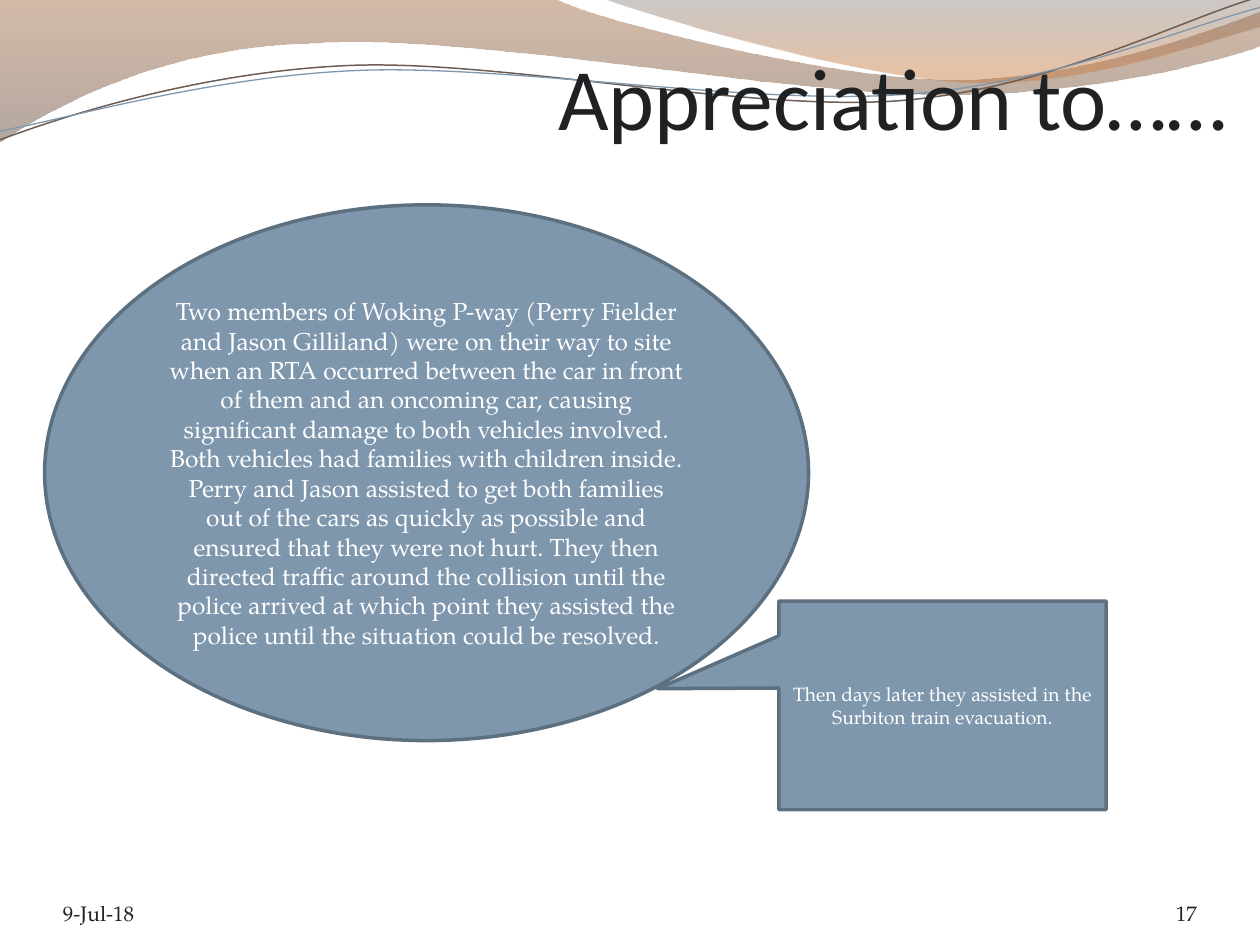
from math import cos, radians, sin

from lxml.etree import Element, SubElement
from pptx import Presentation
from pptx.dml.color import RGBColor
from pptx.enum.shapes import MSO_SHAPE
from pptx.enum.text import MSO_ANCHOR, MSO_AUTO_SIZE, PP_ALIGN
from pptx.oxml.ns import qn
from pptx.util import Cm, Pt

SERIF = "TeX Gyre Pagella"
INCH = 2.54
TILT = -2.7

BAND = [(0, 0), (4.4, -0.01),
        (4.76, 0.17, 6.64, 0.63, 7.58, 0.63), (8.53, 0.63, 9.58, 0.26, 10, 0.09),
        (10.01, 0.36),
        (9.83, 0.44, 8.7, 0.76, 7.46, 0.75), (6.22, 0.75, 3.82, 0.28, 2.57, 0.34),
        (1.29, 0.36, 0.46, 0.83, -0.01, 1.13), (0, 0)]
CREST = [(4.79, -0.01),
         (5.09, 0.11, 6.82, 0.62, 7.69, 0.65), (8.56, 0.69, 9.61, 0.32, 10, 0.21),
         (10, 0), (4.79, -0.01)]
BROWN = [(0, 1.11), (0.48, 0.93, 1.58, 0.57, 2.77, 0.52),
         (3.95, 0.47, 5.93, 0.89, 7.13, 0.8), (8.33, 0.71, 9.38, 0.15, 9.98, -0.02)]
BLUE = [(0, 1.04), (0.47, 0.96, 1.64, 0.61, 2.83, 0.56),
        (4.03, 0.51, 5.97, 0.84, 7.17, 0.75), (8.36, 0.67, 9.41, 0.21, 10, 0.06)]

STORY = (
    "Two members of Woking P-way (Perry Fielder and Jason Gilliland) were on "
    "their way to site when an RTA occurred between the car in front of them "
    "and an oncoming car, causing significant damage to both vehicles involved. "
    "Both vehicles had families with children inside. Perry and Jason assisted "
    "to get both families out of the cars as quickly as possible and ensured "
    "that they were not hurt. They then directed traffic around the collision "
    "until the police arrived at which point they assisted the police until "
    "the situation could be resolved."
)


def color(code):
    return RGBColor.from_string(code)


def pairs(part):
    return list(zip(part[::2], part[1::2]))


def turn(route, mid, angle):
    c, s = cos(radians(angle)), sin(radians(angle))
    return [tuple(value for x, y in pairs(part) for value in (
        mid[0] + (x - mid[0]) * c - (y - mid[1]) * s,
        mid[1] + (x - mid[0]) * s + (y - mid[1]) * c)) for part in route]


def add_wave(slide, route, close):
    parts = [[(Cm(x * INCH), Cm(y * INCH)) for x, y in pairs(part)] for part in route]
    pen = slide.shapes.build_freeform(*parts[0][0])
    pen.add_line_segments([part[-1] for part in parts[1:]], close=close)
    wave = pen.convert_to_shape()
    wave.shadow.inherit = False
    for node, part in zip(list(wave._element.iter(qn("a:lnTo"))), parts[1:]):
        if len(part) == 1:
            continue
        node.tag = qn("a:cubicBezTo")
        for spot, (x, y) in enumerate(part[:2]):
            node.insert(spot, Element(qn("a:pt"), x=str(x - wave.left),
                                      y=str(y - wave.top)))
    return wave


def add_wash(slide, route, stops):
    wash = add_wave(slide, route, True)
    wash.line.fill.background()
    wash.fill.gradient()
    wash.fill.gradient_angle = 270
    for stop, (place, code, _) in zip(wash.fill.gradient_stops, stops):
        stop.position = place
        stop.color.rgb = color(code)
    for node, (_, _, alpha) in zip(wash._element.iter(qn("a:srgbClr")), stops):
        SubElement(node, qn("a:alpha")).set("val", str(alpha * 1000))


def set_line(shape, code, width):
    shape.line.color.rgb = color(code)
    shape.line.width = Pt(width)


def add_curve(slide, route, mid, code, width):
    curve = add_wave(slide, turn(route, mid, -TILT), False)
    curve.rotation = TILT
    curve.fill.background()
    set_line(curve, code, width)


def set_text(shape, text, font, size, code, align, anchor):
    frame = shape.text_frame
    frame.text = text
    frame.word_wrap = True
    frame.auto_size = MSO_AUTO_SIZE.NONE
    frame.vertical_anchor = anchor
    line = frame.paragraphs[0]
    line.alignment = align
    line.font.name = font
    line.font.size = Pt(size)
    line.font.color.rgb = color(code)
    return frame


def clear_pads(frame, top=0):
    frame.margin_left = frame.margin_right = frame.margin_bottom = 0
    frame.margin_top = Cm(top)


def set_title(slide, text):
    title = slide.shapes.title
    title.left, title.top, title.width, title.height = map(Cm, (1.9, 0.73, 22.86, 3.18))
    frame = set_text(title, text, "Calibri", 50, "1F2123",
                     PP_ALIGN.RIGHT, MSO_ANCHOR.TOP)
    clear_pads(frame, 0.13)
    slide.shapes._spTree.append(title._element)


def add_note(slide, text, left, width, align):
    note = slide.shapes.add_textbox(Cm(left), Cm(17.65), Cm(width), Cm(1.02))
    clear_pads(set_text(note, text, SERIF, 12, "1E2021", align, MSO_ANCHOR.BOTTOM))


def add_bubble(slide, kind, box, text, size):
    bubble = slide.shapes.add_shape(kind, *map(Cm, box))
    bubble.shadow.inherit = False
    bubble.fill.solid()
    bubble.fill.fore_color.rgb = color("7E97AD")
    set_line(bubble, "5D7080", 2)
    set_text(bubble, text, SERIF, size, "FFFFFF", PP_ALIGN.CENTER, MSO_ANCHOR.MIDDLE)
    return bubble


def main():
    deck = Presentation()
    deck.slide_width, deck.slide_height = Cm(25.4), Cm(19.05)
    slide = deck.slides.add_slide(deck.slide_layouts[5])
    add_wash(slide, BAND, [(0, "9F683F", 45), (1, "755F51", 55)])
    add_wash(slide, CREST, [(0, "5D4E44", 30), (0.8, "C77A42", 45)])
    add_curve(slide, BROWN, (4.99, 0.57), "6C5E55", 0.85)
    add_curve(slide, BLUE, (5, 0.59), "7E97AD", 0.75)
    set_title(slide, "Appreciation to……")
    add_note(slide, "9-Jul-18", 1.27, 5.92, PP_ALIGN.LEFT)
    add_note(slide, "17", 22.02, 2.11, PP_ALIGN.RIGHT)
    add_bubble(slide, MSO_SHAPE.OVAL, (0.9, 4.13, 15.4, 10.8), STORY, 14)
    call = add_bubble(slide, MSO_SHAPE.RECTANGULAR_CALLOUT, (15.7, 12.12, 6.6, 4.2),
                      "Then days later they assisted in the Surbiton train evacuation.", 11)
    call.adjustments[0] = -0.87
    call.adjustments[1] = -0.08
    deck.save("out.pptx")


if __name__ == "__main__":
    main()
